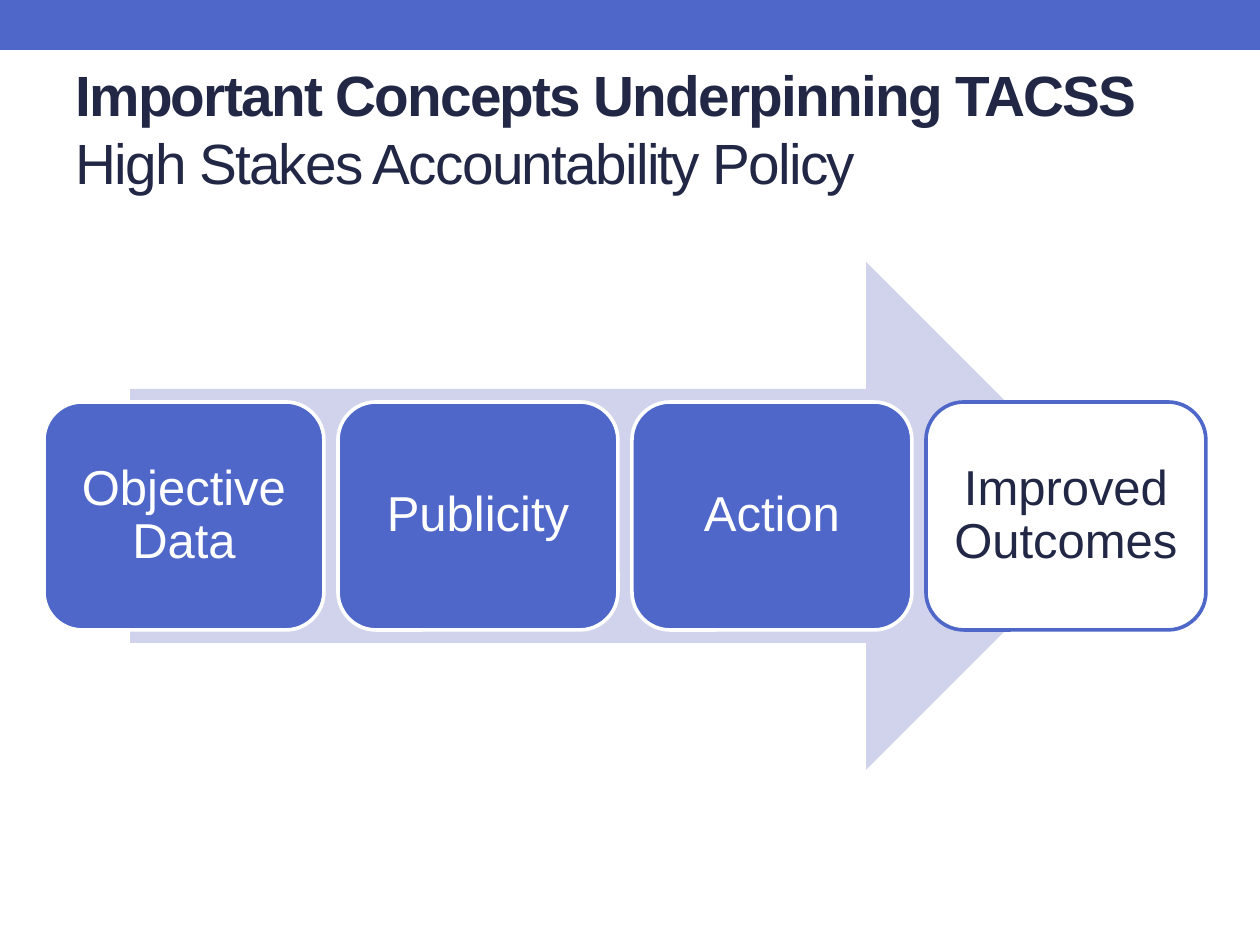
from pptx import Presentation
from pptx.dml.color import RGBColor
from pptx.enum.shapes import MSO_SHAPE
from pptx.enum.text import MSO_ANCHOR, PP_ALIGN
from pptx.util import Pt

PX = 914400 // 126
COLORS = {
    "blue": RGBColor.from_string("4E67C8"),
    "pale": RGBColor.from_string("D0D3EB"),
    "navy": RGBColor.from_string("212745"),
    "white": RGBColor.from_string("FFFFFF"),
}

deck = Presentation()
deck.slide_width, deck.slide_height = 1260 * PX, 945 * PX
page = deck.slides.add_slide(deck.slide_layouts[6])


def add_block(kind, left, top, width, height, fill, line=None):
    block = page.shapes.add_shape(kind, left * PX, top * PX, width * PX, height * PX)
    block.shadow.inherit = False
    block.fill.solid()
    block.fill.fore_color.rgb = COLORS[fill]
    if line:
        block.line.color.rgb = COLORS[line]
        block.line.width = Pt(2.08)
    else:
        block.line.fill.background()
    return block


def format_span(span, size, color, bold=False):
    span.font.name = "Arial"
    span.font.size = Pt(size)
    span.font.bold = bold
    span.font.color.rgb = COLORS[color]


# Top band
add_block(MSO_SHAPE.RECTANGLE, 0, 0, 1260, 50, "blue")

# Title and subtitle
title = page.shapes.add_textbox(63 * PX, 61 * PX, 1134 * PX, 134 * PX)
frame = title.text_frame
frame.word_wrap = True
frame.vertical_anchor = MSO_ANCHOR.MIDDLE
frame.text = "Important Concepts Underpinning TACSS\nHigh Stakes Accountability Policy"
for para, bold in zip(frame.paragraphs, (True, False)):
    span = para.runs[0]
    format_span(span, 32.4, "navy", bold)
    span.font._element.set("spc", "-100")

# Arrow behind the steps
add_block(MSO_SHAPE.RIGHT_ARROW, 130, 262, 990, 508, "pale")

# Steps: text, fill, outline, text colour
steps = [
    ("Objective Data", "blue", "white", "white"),
    ("Publicity", "blue", "white", "white"),
    ("Action", "blue", "white", "white"),
    ("Improved Outcomes", "white", "blue", "navy"),
]
for index, (text, fill, line, color) in enumerate(steps):
    box = add_block(MSO_SHAPE.ROUNDED_RECTANGLE, 44 + 294 * index, 402, 280, 228, fill, line)
    frame = box.text_frame
    frame.word_wrap = True
    frame.vertical_anchor = MSO_ANCHOR.MIDDLE
    frame.margin_left = frame.margin_right = 14 * PX
    frame.text = text
    para = frame.paragraphs[0]
    para.alignment = PP_ALIGN.CENTER
    para.line_spacing = 0.9
    format_span(para.runs[0], 28, color)

deck.save("out.pptx")
